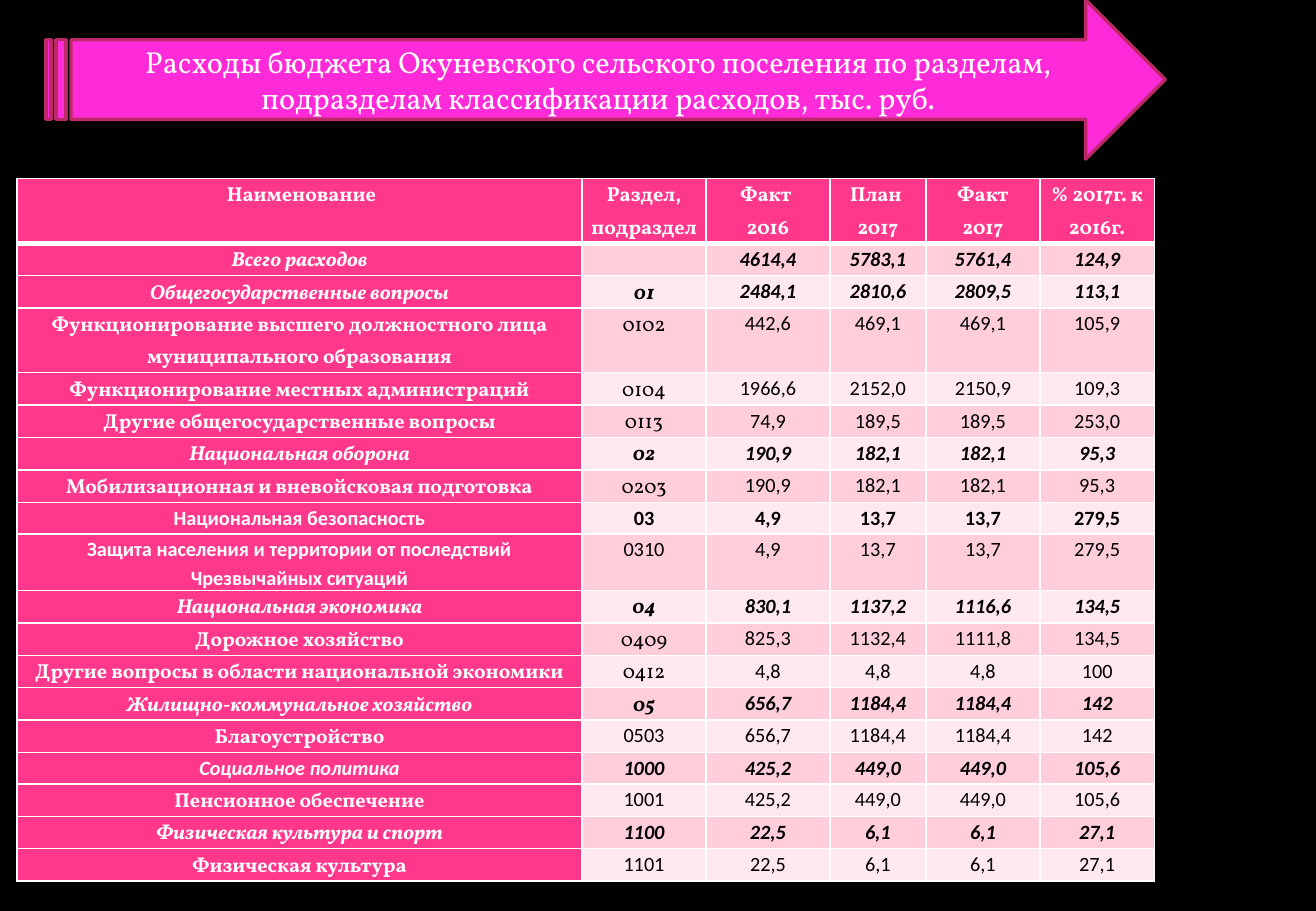
from lxml import etree
from pptx import Presentation
from pptx.dml.color import RGBColor
from pptx.enum.shapes import MSO_SHAPE
from pptx.enum.text import MSO_ANCHOR, PP_ALIGN
from pptx.oxml.ns import qn
from pptx.util import Inches, Pt

ARROW = MSO_SHAPE.STRIPED_RIGHT_ARROW
CENTER = PP_ALIGN.CENTER
MIDDLE = MSO_ANCHOR.MIDDLE
SERIF, SANS = "Vollkorn", "Calibri"
WHITE, BLACK = "FFFFFF", "000000"
PINK, BANDS = "FF388C", ("FFCEDA", "FFE8EE")
MAGENTA, CRIMSON = "FF2BD8", "BD2968"

TITLE = ("Расходы бюджета Окуневского сельского поселения по разделам, "
         "подразделам классификации расходов, тыс. руб.")
HEADINGS = (" Наименование", "Раздел,\nподраздел", "Факт \n2016",
            "План \n2017", "Факт\n2017", "% 2017г. к 2016г.")
EXPENSES = [
    ("Всего расходов", "", "4614,4", "5783,1", "5761,4", "124,9"),
    ("Общегосударственные вопросы", "01", "2484,1", "2810,6", "2809,5", "113,1"),
    ("Функционирование высшего должностного лица муниципального образования",
     "0102", "442,6", "469,1", "469,1", "105,9"),
    ("Функционирование местных администраций", "0104", "1966,6", "2152,0", "2150,9", "109,3"),
    ("Другие общегосударственные вопросы", "0113", "74,9", "189,5", "189,5", "253,0"),
    ("Национальная оборона", "02", "190,9", "182,1", "182,1", "95,3"),
    ("Мобилизационная и вневойсковая подготовка", "0203", "190,9", "182,1", "182,1", "95,3"),
    ("Национальная безопасность", "03", "4,9", "13,7", "13,7", "279,5"),
    ("Защита населения и территории от последствий Чрезвычайных ситуаций",
     "0310", "4,9", "13,7", "13,7", "279,5"),
    ("Национальная экономика", "04", "830,1", "1137,2", "1116,6", "134,5"),
    ("Дорожное хозяйство", "0409", "825,3", "1132,4", "1111,8", "134,5"),
    ("Другие вопросы в области национальной экономики", "0412", "4,8", "4,8", "4,8", "100"),
    ("Жилищно-коммунальное хозяйство", "05", "656,7", "1184,4", "1184,4", "142"),
    ("Благоустройство", "0503", "656,7", "1184,4", "1184,4", "142"),
    ("Социальное политика", "1000", "425,2", "449,0", "449,0", "105,6"),
    ("Пенсионное обеспечение", "1001", "425,2", "449,0", "449,0", "105,6"),
    ("Физическая культура и спорт", "1100", "22,5", "6,1", "6,1", "27,1"),
    ("Физическая культура", "1101", "22,5", "6,1", "6,1", "27,1"),
]
SECTIONS = ("", "01", "02", "03", "04", "05", "1000", "1100")
UPRIGHT_SECTIONS = ("03",)
SANS_NAMES = ("03", "0310", "1000")
SANS_CODES = ("03", "0310", "0503", "1000", "1001", "1100", "1101")
COLUMN_WIDTHS = (4.65, 1.02, 1.02, 0.79, 0.94, 0.94)
ROW_HEIGHT = 0.26
SPECIAL_HEIGHTS = {0: 0.52, 1: 0.22, 3: 0.52, 12: 0.15}


def color(value):
    return RGBColor.from_string(value)


def write(frame, text, font=SERIF, size=12, fill=WHITE, bold=False, italic=False, spacing=None):
    frame.word_wrap = True
    for number, line in enumerate(text.split("\n")):
        paragraph = frame.add_paragraph() if number else frame.paragraphs[0]
        paragraph.alignment = CENTER
        paragraph.line_spacing = spacing
        if not line:
            etree.SubElement(paragraph._p, qn("a:endParaRPr"), sz=str(size * 100))
            continue
        run = paragraph.add_run()
        run.text = line
        run.font.name, run.font.size = font, Pt(size)
        run.font.bold, run.font.italic = bold, italic
        run.font.color.rgb = color(fill)


def add_border(cell, side, points):
    line = etree.SubElement(cell._tc.get_or_add_tcPr(), qn("a:ln" + side), w=str(Pt(points)))
    etree.SubElement(etree.SubElement(line, qn("a:solidFill")), qn("a:srgbClr"), val=WHITE)


def fill_cell(cell, row, text, background, **style):
    cell.margin_left = cell.margin_right = Inches(0.03)
    cell.margin_top = cell.margin_bottom = 0
    for side in "LRTB":
        under_heading = (row, side) in ((0, "B"), (1, "T"))
        add_border(cell, side, 3 if under_heading else 1)
    cell.fill.solid()
    cell.fill.fore_color.rgb = color(background)
    write(cell.text_frame, text, spacing=1.15, **style)


def cell_style(row, column):
    if row == 0:
        return PINK, {"bold": True}
    code = EXPENSES[row - 1][1]
    section = code in SECTIONS
    italic = section and code not in UPRIGHT_SECTIONS
    if column == 0:
        font = SANS if code in SANS_NAMES else SERIF
        return PINK, {"font": font, "bold": True, "italic": italic}
    font = SERIF if column == 1 and code not in SANS_CODES else SANS
    return BANDS[(row - 1) % 2], {"font": font, "fill": BLACK, "bold": section, "italic": italic}


def main():
    deck = Presentation()
    deck.slide_width, deck.slide_height = Inches(10.83), Inches(7.5)
    slide = deck.slides.add_slide(deck.slide_layouts[6])
    slide.background.fill.solid()
    slide.background.fill.fore_color.rgb = color(BLACK)

    rows = [HEADINGS] + EXPENSES
    heights = [SPECIAL_HEIGHTS.get(row, ROW_HEIGHT) for row in range(len(rows))]
    budget = slide.shapes.add_table(
        len(rows), len(HEADINGS), Inches(0.14), Inches(1.47),
        Inches(sum(COLUMN_WIDTHS)), Inches(sum(heights))).table
    for column, width in enumerate(COLUMN_WIDTHS):
        budget.columns[column].width = Inches(width)
    for row, entries in enumerate(rows):
        budget.rows[row].height = Inches(heights[row])
        for column, text in enumerate(entries):
            background, style = cell_style(row, column)
            fill_cell(budget.cell(row, column), row, text, background, **style)

    banner = slide.shapes.add_shape(ARROW, Inches(0.38), 0, Inches(9.21), Inches(1.31))
    banner.shadow.inherit = False
    banner.fill.solid()
    banner.fill.fore_color.rgb = color(MAGENTA)
    banner.line.color.rgb = color(CRIMSON)
    banner.line.width = Pt(2)
    banner.text_frame.vertical_anchor = MIDDLE
    write(banner.text_frame, TITLE, size=18)

    deck.save("out.pptx")


if __name__ == "__main__":
    main()
